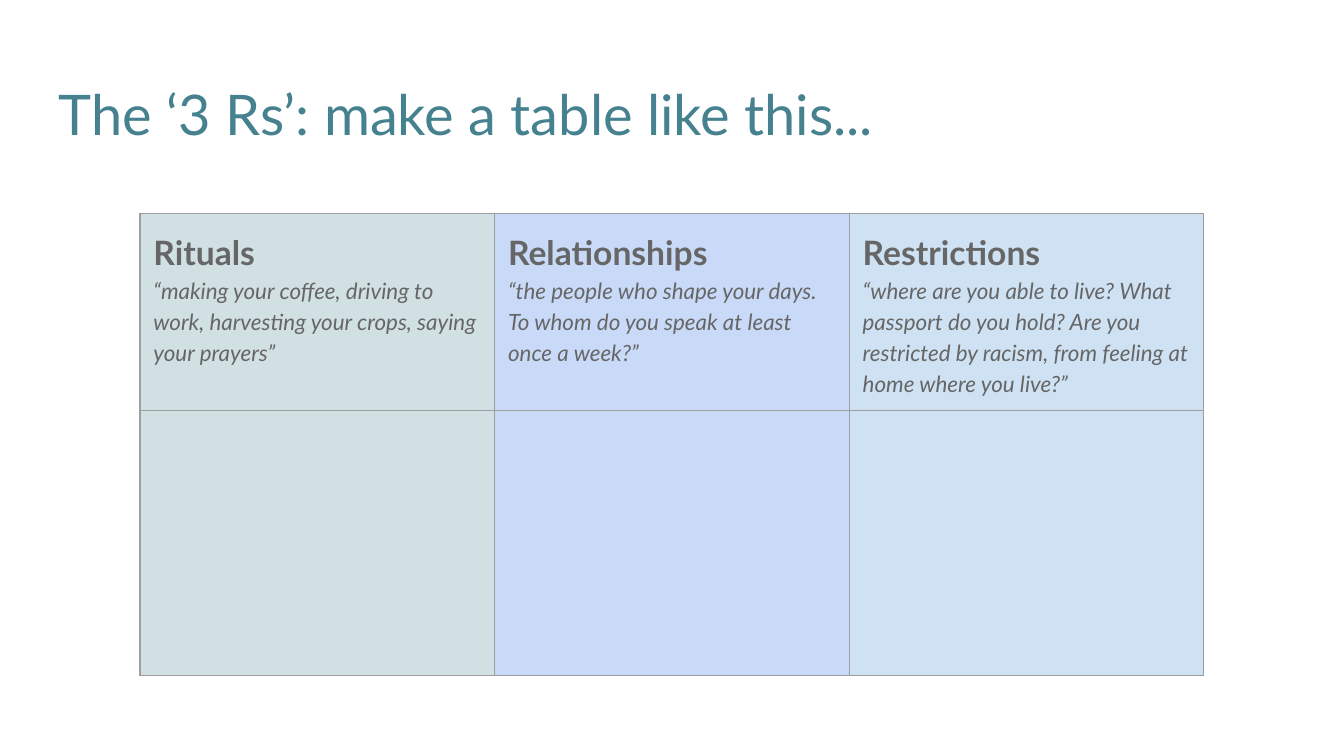
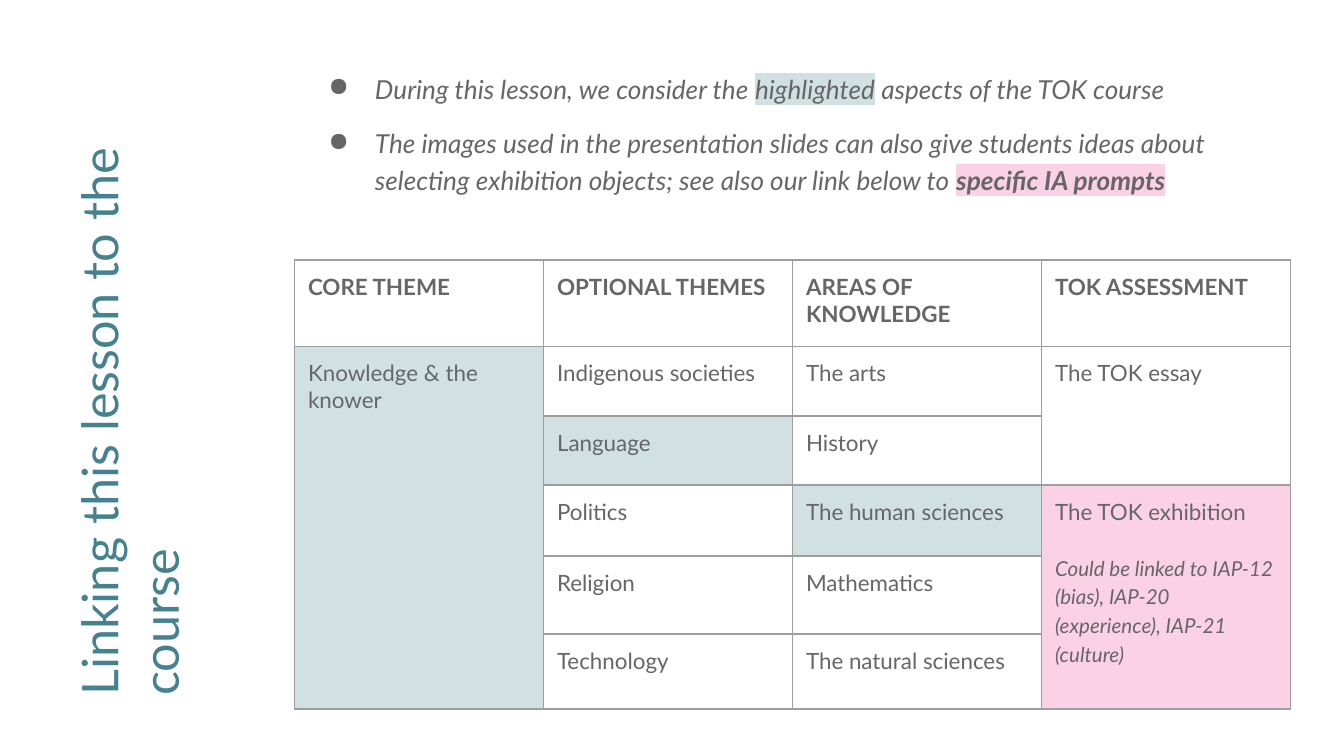
from dataclasses import dataclass

from lxml.etree import SubElement
from pptx import Presentation
from pptx.dml.color import RGBColor
from pptx.enum.text import MSO_ANCHOR, MSO_AUTO_SIZE
from pptx.oxml import parse_xml
from pptx.oxml.ns import nsdecls, qn
from pptx.util import Pt


@dataclass(frozen=True)
class Theme:
    font: str = "Lato"
    teal: str = "45818E"
    ink: str = "666666"
    rule: str = "9E9E9E"
    white: str = "FFFFFF"
    sage: str = "D0E0E3"
    periwinkle: str = "C9DAF8"
    sky: str = "CFE2F3"
    pink: str = "FBD1E6"
    title: int = 30
    side_title: int = 27
    heading: int = 18
    body: int = 14
    table: int = 12
    note: int = 11
    loose: float = 1.15
    inset: float = 7.2
    border: float = 0.75


THEME = Theme()


class Deck:
    def __init__(self, theme):
        self.theme = theme
        self.presentation = Presentation()
        self.presentation.slide_width = Pt(720)
        self.presentation.slide_height = Pt(405)
        self.slide = None

    def new_slide(self):
        self.slide = self.presentation.slides.add_slide(self.presentation.slide_layouts[6])

    def apply(self, target, values):
        for name, value in values.items():
            setattr(target, name, value)

    def inset(self, target):
        sides = ("left", "right", "top", "bottom")
        self.apply(target, {f"margin_{side}": Pt(self.theme.inset) for side in sides})

    def bullet(self, paragraph):
        properties = paragraph._p.get_or_add_pPr()
        properties.set("marL", str(Pt(36)))
        properties.set("indent", str(-Pt(25)))
        colour = SubElement(properties, qn("a:buClr"))
        SubElement(colour, qn("a:srgbClr"), val=self.theme.ink)
        SubElement(properties, qn("a:buChar"), char="●")

    def add_run(self, paragraph, text, size, color=None, highlight=None, **style):
        run = paragraph.add_run()
        run.text = text
        self.apply(run.font, {"name": self.theme.font, "size": Pt(size), **style})
        run.font.color.rgb = RGBColor.from_string(color or self.theme.ink)
        if highlight:
            marker = parse_xml(
                f'<a:highlight {nsdecls("a")}><a:srgbClr val="{highlight}"/></a:highlight>'
            )
            run._r.get_or_add_rPr().find(qn("a:solidFill")).addnext(marker)

    def fill_text(self, frame, paragraphs, bulleted=False):
        frame.word_wrap = True
        for index, (runs, spacing) in enumerate(paragraphs):
            paragraph = frame.add_paragraph() if index else frame.paragraphs[0]
            self.apply(paragraph, spacing)
            if bulleted:
                self.bullet(paragraph)
            for text, style in runs:
                self.add_run(paragraph, text, **style)

    def text(self, box, paragraphs, rotation=0, bulleted=False):
        area = self.slide.shapes.add_textbox(*map(Pt, box))
        area.rotation = rotation
        self.apply(
            area.text_frame,
            {"auto_size": MSO_AUTO_SIZE.NONE, "vertical_anchor": MSO_ANCHOR.TOP},
        )
        self.inset(area.text_frame)
        self.fill_text(area.text_frame, paragraphs, bulleted)

    def title(self, box, wording, size, rotation=0):
        style = {"size": size, "color": self.theme.teal}
        self.text(box, [([(wording, style)], {})], rotation)

    def borders(self, cell):
        properties = cell._tc.get_or_add_tcPr()
        for index, side in enumerate("LRTB"):
            line = parse_xml(
                f'<a:ln{side} {nsdecls("a")} w="{Pt(self.theme.border)}"><a:solidFill>'
                f'<a:srgbClr val="{self.theme.rule}"/></a:solidFill></a:ln{side}>'
            )
            properties.insert(index, line)

    def table(self, left, top, column_width, row_heights, content, fills, spans=()):
        columns = len(content[0])
        grid = self.slide.shapes.add_table(
            len(row_heights), columns, Pt(left), Pt(top),
            Pt(column_width * columns), Pt(sum(row_heights)),
        ).table
        self.apply(grid, {"first_row": False, "horz_banding": False})
        for column in grid.columns:
            column.width = Pt(column_width)
        for row, height in zip(grid.rows, row_heights):
            row.height = Pt(height)
        for first, last in spans:
            grid.cell(*first).merge(grid.cell(*last))
        for r, row in enumerate(content):
            for c, paragraphs in enumerate(row):
                cell = grid.cell(r, c)
                self.inset(cell)
                if (r, c) in fills:
                    cell.fill.solid()
                    cell.fill.fore_color.rgb = RGBColor.from_string(fills[r, c])
                else:
                    cell.fill.background()
                self.borders(cell)
                self.fill_text(cell.text_frame, paragraphs)


def three_rs(deck):
    theme = deck.theme
    deck.new_slide()
    deck.title((24.5, 35.4, 671, 45.4), "The ‘3 Rs’: make a table like this...", theme.title)
    topics = [
        ("Rituals", "“making your coffee, driving to work, harvesting your crops, "
         "saying your prayers”", theme.sage),
        ("Relationships", "“the people who shape your days. To whom do you speak "
         "at least once a week?”", theme.periwinkle),
        ("Restrictions", "“where are you able to live? What passport do you hold? Are you "
         "restricted by racism, from feeling at home where you live?”", theme.sky),
    ]
    loose = {"line_spacing": theme.loose}
    prompts = [
        [
            ([(heading, {"size": theme.heading, "bold": True})], loose),
            ([(prompt, {"size": theme.table, "italic": True})], loose),
        ]
        for heading, prompt, _ in topics
    ]
    fills = {(r, c): topic[2] for r in range(2) for c, topic in enumerate(topics)}
    deck.table(75, 114.3, 190, (96, 142), [prompts, [[]] * len(topics)], fills)


def course_links(deck):
    theme = deck.theme
    deck.new_slide()
    deck.title((-95, 153.4, 350.6, 102.2), "Linking this lesson to the course",
               theme.side_title, rotation=270)

    plain = {"size": theme.body, "italic": True}
    loose = {"line_spacing": theme.loose}
    deck.text((157.8, 29.5, 538, 88), [
        ([
            ("During this lesson, we consider the ", plain),
            ("highlighted", {**plain, "highlight": theme.sage}),
            (" aspects of the TOK course", plain),
        ], loose),
        ([
            ("The images used in the presentation slides can also give students ideas about "
             "selecting exhibition objects; see also our link below to ", plain),
            ("specific IA prompts", {**plain, "bold": True, "highlight": theme.pink}),
        ], {**loose, "space_before": Pt(10), "space_after": Pt(10)}),
    ], bulleted=True)

    wording = [
        ("CORE THEME", "OPTIONAL THEMES", "AREAS OF KNOWLEDGE", "TOK ASSESSMENT"),
        ("Knowledge & the knower", "Indigenous societies", "The arts", "The TOK essay"),
        ("", "Language", "History", ""),
        ("", "Politics", "The human sciences", "The TOK exhibition"),
        ("", "Religion", "Mathematics", ""),
        ("", "Technology", "The natural sciences", ""),
    ]
    content = [
        [[([(entry, {"size": theme.table, "bold": r == 0})], {})] if entry else []
         for entry in row]
        for r, row in enumerate(wording)
    ]
    content[3][3].append((
        [("Could be linked to IAP-12 (bias), IAP-20 (experience), IAP-21 (culture)",
          {"size": theme.note, "italic": True})],
        {**loose, "space_before": Pt(14.4)},
    ))
    fills = {(0, c): theme.white for c in range(4)}
    fills.update({cell: theme.sage for cell in ((1, 0), (2, 1), (3, 2))})
    fills[3, 3] = theme.pink
    spans = [((1, 0), (5, 0)), ((1, 3), (2, 3)), ((3, 3), (5, 3))]
    deck.table(157.8, 139.3, 133.4, (46.2, 37.4, 37, 38, 41.8, 40.2), content, fills, spans)


def main():
    deck = Deck(THEME)
    three_rs(deck)
    course_links(deck)
    deck.presentation.save("out.pptx")


if __name__ == "__main__":
    main()
